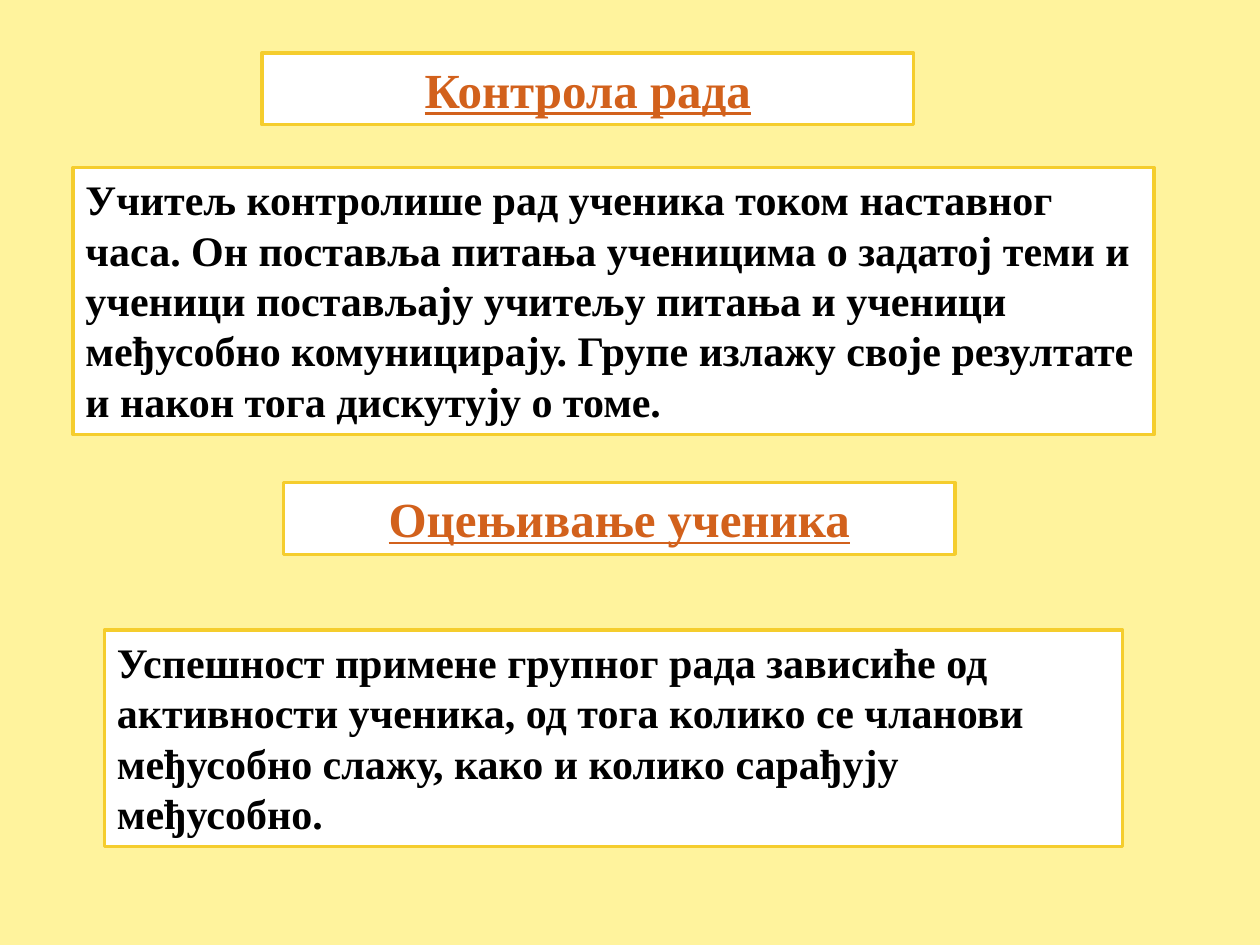
"""Builds a slide on checking group work and grading pupils."""
from pptx import Presentation
from pptx.dml.color import RGBColor
from pptx.enum.shapes import MSO_SHAPE
from pptx.enum.text import MSO_ANCHOR, MSO_AUTO_SIZE, PP_ALIGN
from pptx.util import Inches, Pt

RECTANGLE = MSO_SHAPE.RECTANGLE
TOP = MSO_ANCHOR.TOP
GROW = MSO_AUTO_SIZE.SHAPE_TO_FIT_TEXT
LEFT, CENTER = PP_ALIGN.LEFT, PP_ALIGN.CENTER

FONT = "Times New Roman"
COLORS = {
    "background": "FFF39D",
    "box": "FFFFFF",
    "border": "F5CD2D",
    "heading": "D2611C",
    "body": "000000",
}
STYLES = {
    "heading": dict(size=28, color="heading", align=CENTER, underline=True),
    "body": dict(size=24, color="body", align=LEFT, underline=False),
}
BOXES = [
    ("heading", (2.08, 0.42, 5.17, 0.57), "Контрола рада"),
    ("body", (0.58, 1.33, 8.58, 2.12),
     "Учитељ контролише рад ученика током наставног часа. Он поставља питања "
     "ученицима о задатој теми и ученици постављају учитељу питања и ученици "
     "међусобно комуницирају. Групе излажу своје резултате и након тога "
     "дискутују о томе."),
    ("heading", (2.25, 3.83, 5.33, 0.57), "Оцењивање ученика"),
    ("body", (0.83, 5, 8.08, 1.72),
     "Успешност примене групног рада зависиће од активности ученика, од тога "
     "колико се чланови међусобно слажу, како и колико сарађују међусобно."),
]


def rgb(name):
    return RGBColor.from_string(COLORS[name])


def add_text_box(page, text, *, place, size, color, align, underline):
    box = page.shapes.add_shape(RECTANGLE, *map(Inches, place))
    box.shadow.inherit = False
    box.fill.solid()
    box.fill.fore_color.rgb = rgb("box")
    box.line.color.rgb = rgb("border")
    box.line.width = Pt(2)
    frame = box.text_frame
    frame.word_wrap = True
    frame.auto_size = GROW
    frame.vertical_anchor = TOP
    para = frame.paragraphs[0]
    para.alignment = align
    span = para.add_run()
    span.text = text
    span.font.name = FONT
    span.font.size = Pt(size)
    span.font.bold = True
    span.font.underline = underline
    span.font.color.rgb = rgb(color)


def main():
    deck = Presentation()
    deck.slide_width, deck.slide_height = Inches(10), Inches(7.5)
    page = deck.slides.add_slide(deck.slide_layouts[6])
    page.background.fill.solid()
    page.background.fill.fore_color.rgb = rgb("background")
    for style, place, text in BOXES:
        add_text_box(page, text, place=place, **STYLES[style])
    deck.save("out.pptx")


if __name__ == "__main__":
    main()
